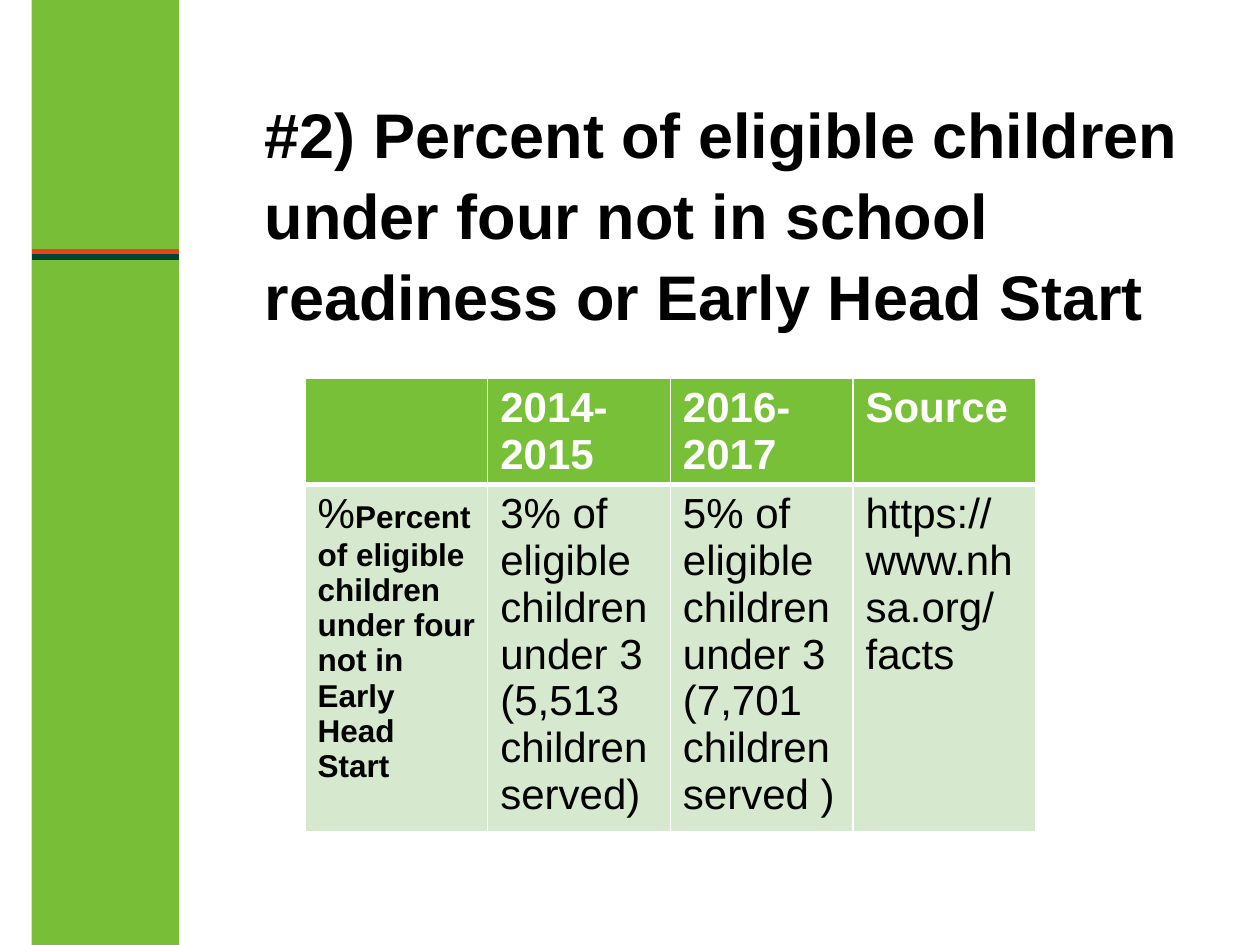
import dataclasses

import pptx
import pptx.dml.color
import pptx.enum.shapes
import pptx.enum.text
import pptx.oxml
import pptx.oxml.ns
import pptx.util

Cm = pptx.util.Cm
Pt = pptx.util.Pt


@dataclasses.dataclass(frozen=True)
class Theme:
    """Colours, typeface and type sizes of the slide."""
    font: str = "Arial"
    band: str = "78BF37"
    upper_rule: str = "EA421F"
    lower_rule: str = "004531"
    header: str = "78C037"
    body: str = "D6E8CE"
    light: str = "FFFFFF"
    dark: str = "000000"
    title_size: int = 36
    table_size: int = 24
    label_size: int = 18


THEME = Theme()
TITLE = "#2) Percent of eligible children under four not in school readiness or Early Head Start"
HEADINGS = ["", "2014-2015", "2016-2017", "Source"]
ROW_LABEL = "Percent of eligible children under four not in Early Head Start"
VALUES = [
    "3% of eligible children under 3 (5,513 children served)",
    "5% of eligible children under 3 (7,701 children served )",
    "https://www.nhsa.org/facts",
]


def rgb(colour):
    """Return a colour object for a hex string."""
    return pptx.dml.color.RGBColor.from_string(colour)


def add_run(paragraph, text, size, colour, bold):
    """Append one formatted run to a paragraph."""
    run = paragraph.add_run()
    run.text = text
    run.font.name = THEME.font
    run.font.size = Pt(size)
    run.font.bold = bold
    run.font.color.rgb = rgb(colour)


def add_side_band(slide, left, top, width, height):
    """Draw the vertical band with its two crossing rules."""
    band = slide.shapes.add_shape(
        pptx.enum.shapes.MSO_SHAPE.RECTANGLE, left, top, width, height)
    band.shadow.inherit = False
    band.fill.solid()
    band.fill.fore_color.rgb = rgb(THEME.band)
    band.line.fill.background()
    rules = [(Cm(5.08), THEME.upper_rule), (Cm(5.18), THEME.lower_rule)]
    for offset, colour in rules:
        rule = slide.shapes.add_connector(
            pptx.enum.shapes.MSO_CONNECTOR.STRAIGHT,
            left, top + offset, left + width, top + offset)
        rule.line.color.rgb = rgb(colour)
        rule.line.width = Pt(3)
        properties = rule._element.spPr
        properties.append(properties.makeelement(pptx.oxml.ns.qn("a:effectLst"), {}))


def place_title(slide, left, top, width, height):
    """Move the title placeholder and fill it."""
    title = slide.shapes.title
    title.left, title.top, title.width, title.height = left, top, width, height
    frame = title.text_frame
    frame.word_wrap = True
    frame.auto_size = pptx.enum.text.MSO_AUTO_SIZE.NONE
    frame.vertical_anchor = pptx.enum.text.MSO_ANCHOR.TOP
    paragraph = frame.paragraphs[0]
    paragraph.alignment = pptx.enum.text.PP_ALIGN.LEFT
    paragraph.line_spacing = 1.07
    add_run(paragraph, TITLE, THEME.title_size, THEME.dark, True)


def style_cell(cell, colour, top_width, bottom_width):
    """Give a cell its borders and fill."""
    properties = cell._tc.get_or_add_tcPr()
    widths = {"lnL": 1, "lnR": 1, "lnT": top_width, "lnB": bottom_width}
    for side, width in widths.items():
        properties.append(pptx.oxml.parse_xml(
            f'<a:{side} {pptx.oxml.ns.nsdecls("a")} w="{Pt(width)}"><a:solidFill>'
            f'<a:srgbClr val="{THEME.light}"/></a:solidFill></a:{side}>'))
    cell.fill.solid()
    cell.fill.fore_color.rgb = rgb(colour)


def add_comparison_table(slide, left, top, width, row_heights):
    """Build the two-row comparison of school years."""
    columns = len(HEADINGS)
    table = slide.shapes.add_table(
        len(row_heights), columns, left, top, width, sum(row_heights)).table
    table.horz_banding = False
    for row, height in zip(table.rows, row_heights):
        row.height = height
    for column in table.columns:
        column.width = width // columns
    header = [[(text, THEME.table_size, THEME.light, True)] if text else []
              for text in HEADINGS]
    label = [("%", THEME.table_size, THEME.dark, False),
             (ROW_LABEL, THEME.label_size, THEME.dark, True)]
    body = [label] + [[(text, THEME.table_size, THEME.dark, False)] for text in VALUES]
    styles = [(THEME.header, 1, 3), (THEME.body, 3, 1)]
    for row, contents, style in zip(table.rows, [header, body], styles):
        for cell, runs in zip(row.cells, contents):
            style_cell(cell, *style)
            for run in runs:
                add_run(cell.text_frame.paragraphs[0], *run)


def main():
    """Build and save the presentation."""
    presentation = pptx.Presentation()
    presentation.slide_width = Cm(25.4)
    presentation.slide_height = Cm(19.05)
    slide = presentation.slides.add_slide(presentation.slide_layouts[5])
    add_side_band(slide, Cm(0.64), Cm(0), Cm(2.97), presentation.slide_height)
    add_comparison_table(slide, Cm(6.15), Cm(7.62), Cm(14.73), [Cm(1.04), Cm(7.01)])
    place_title(slide, Cm(5.08), Cm(1.7), Cm(19.48), Cm(3.18))
    presentation.save("out.pptx")


if __name__ == "__main__":
    main()
